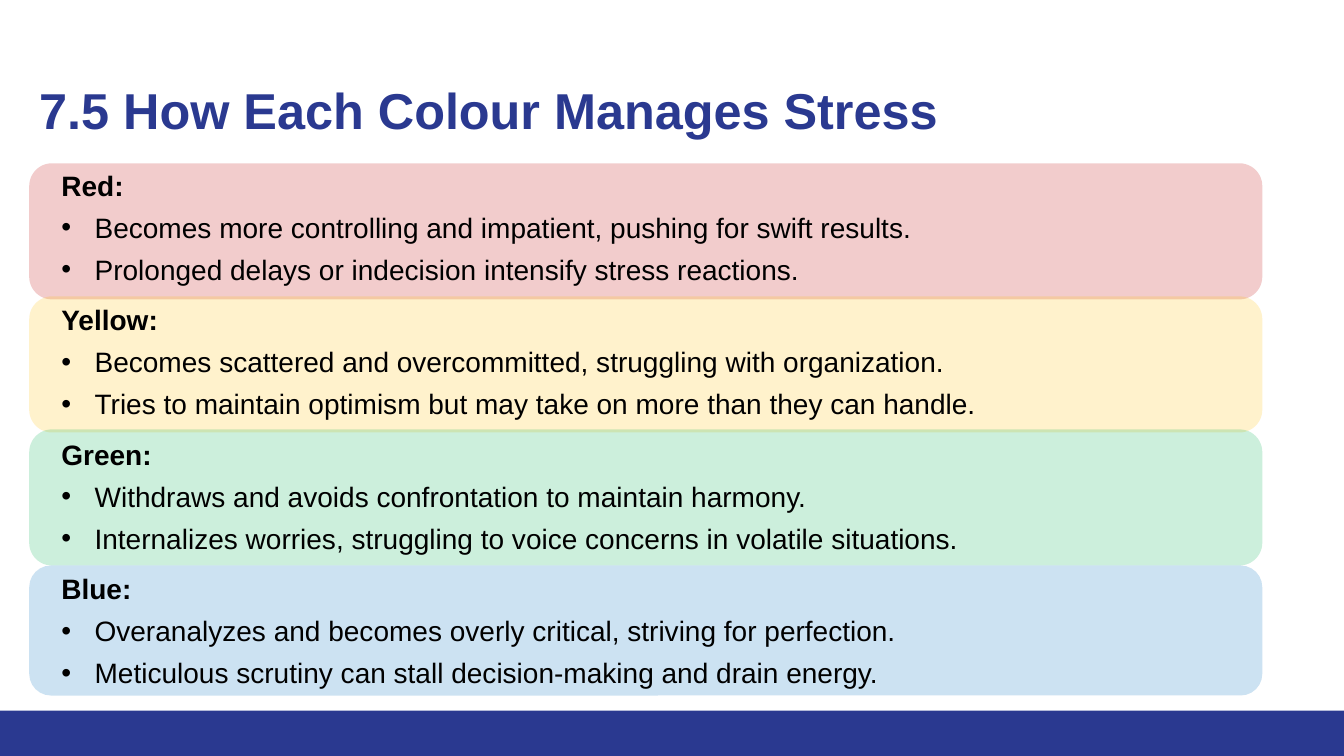
"""Build the slide on how each colour manages stress."""
from lxml.etree import SubElement
from pptx import Presentation
from pptx.dml.color import RGBColor
from pptx.enum.shapes import MSO_SHAPE
from pptx.enum.text import MSO_ANCHOR
from pptx.oxml.ns import qn
from pptx.util import Inches, Pt

NAVY = RGBColor(0x2A, 0x39, 0x90)
BLACK = RGBColor(0, 0, 0)
RED = RGBColor(0xC0, 0, 0)
YELLOW = RGBColor(0xFF, 0xC0, 0)
GREEN = RGBColor(0, 0xB0, 0x50)
BLUE = RGBColor(0, 0x70, 0xC0)

STRESS_RESPONSES = [
    ("Red:", RED, 1.62, 1.35, [
        "Becomes more controlling and impatient, pushing for swift results.",
        "Prolonged delays or indecision intensify stress reactions."]),
    ("Yellow:", YELLOW, 2.94, 1.35, [
        "Becomes scattered and overcommitted, struggling with organization.",
        "Tries to maintain optimism but may take on more than they can handle."]),
    ("Green:", GREEN, 4.26, 1.35, [
        "Withdraws and avoids confrontation to maintain harmony.",
        "Internalizes worries, struggling to voice concerns in volatile situations."]),
    ("Blue:", BLUE, 5.61, 1.29, [
        "Overanalyzes and becomes overly critical, striving for perfection.",
        "Meticulous scrutiny can stall decision-making and drain energy."]),
]


def add_panel(kind, left, top, width, height, color, opacity=100):
    panel = slide.shapes.add_shape(
        kind, Inches(left), Inches(top), Inches(width), Inches(height))
    panel.shadow.inherit = False
    panel.fill.solid()
    panel.fill.fore_color.rgb = color
    panel.line.fill.background()
    if opacity < 100:
        color_xml = panel._element.spPr.find(qn("a:solidFill"))[0]
        SubElement(color_xml, qn("a:alpha"), val=str(opacity * 1000))


def write(paragraph, text, size=20, color=BLACK, bold=False, before=0,
          spacing=1.0, bullet=False):
    paragraph.space_before = Pt(before)
    paragraph.line_spacing = spacing
    run = paragraph.add_run()
    run.text = text
    run.font.name = "Arial"
    run.font.size = Pt(size)
    run.font.bold = bold
    run.font.color.rgb = color
    if bullet:
        properties = paragraph._p.get_or_add_pPr()
        properties.set("marL", str(Inches(0.33)))
        properties.set("indent", str(-Inches(0.33)))
        SubElement(properties, qn("a:buFont"), typeface="Arial")
        SubElement(properties, qn("a:buChar"), char="•")


presentation = Presentation()
presentation.slide_width = Inches(13.33)
presentation.slide_height = Inches(7.5)
slide = presentation.slides.add_slide(presentation.slide_layouts[6])

add_panel(MSO_SHAPE.RECTANGLE, 0, 7.05, 13.33, 0.45, NAVY)
for heading, color, top, height, habits in STRESS_RESPONSES:
    add_panel(MSO_SHAPE.ROUNDED_RECTANGLE, 0.29, top, 12.23, height, color, opacity=20)

title = slide.shapes.add_textbox(
    Inches(0.29), Inches(0.4), Inches(12.69), Inches(1.45)).text_frame
title.word_wrap = True
title.vertical_anchor = MSO_ANCHOR.MIDDLE
write(title.paragraphs[0], "7.5 How Each Colour Manages Stress",
      size=36, color=NAVY, bold=True, spacing=0.9)

responses = slide.shapes.add_textbox(
    Inches(0.51), Inches(1.62), Inches(11.28), Inches(5.41)).text_frame
responses.word_wrap = True
for index, (heading, color, top, height, habits) in enumerate(STRESS_RESPONSES):
    heading_line = responses.add_paragraph() if index else responses.paragraphs[0]
    write(heading_line, heading, bold=True, before=12 if index else 6)
    for habit in habits:
        write(responses.add_paragraph(), habit, before=6, bullet=True)

presentation.save("out.pptx")
